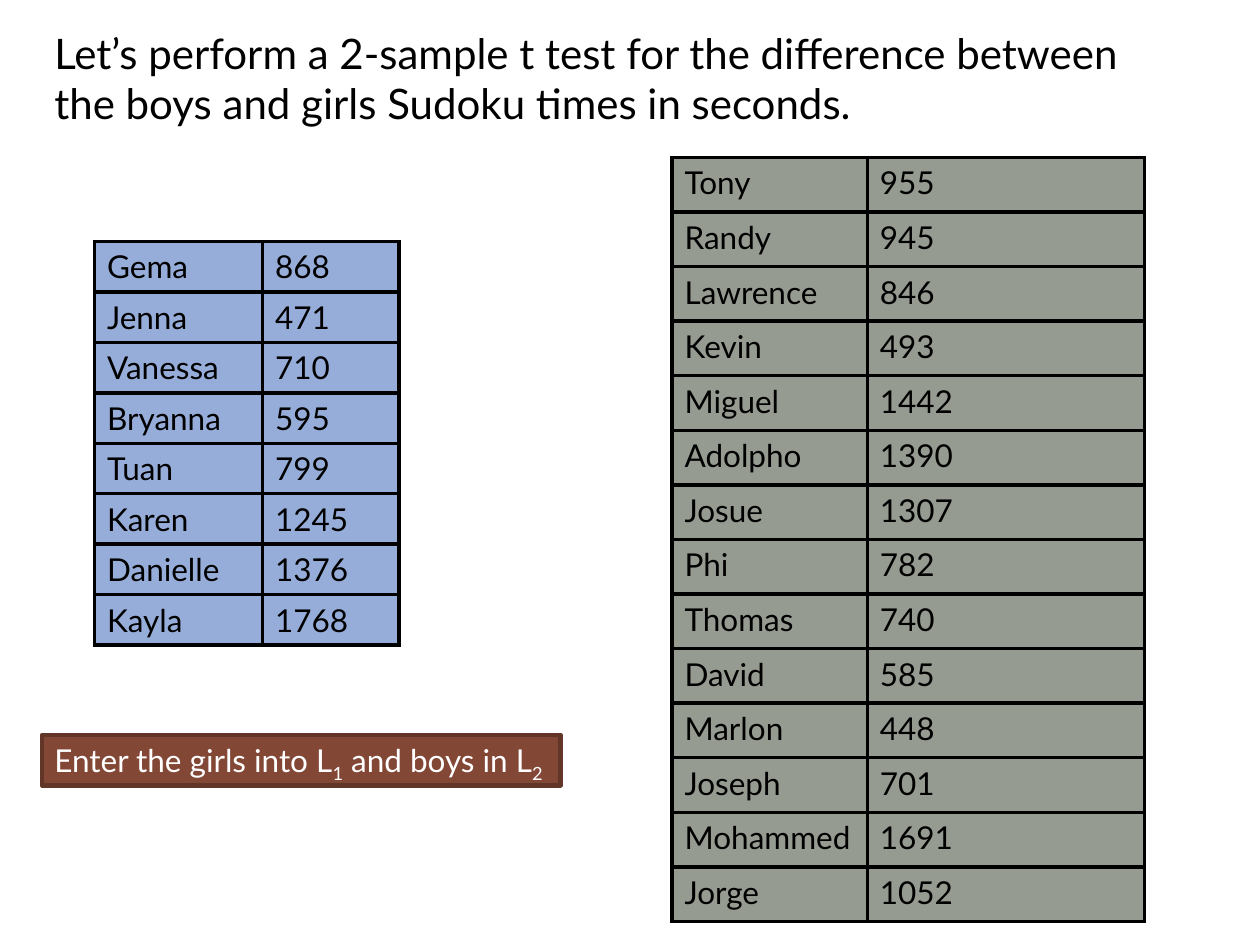
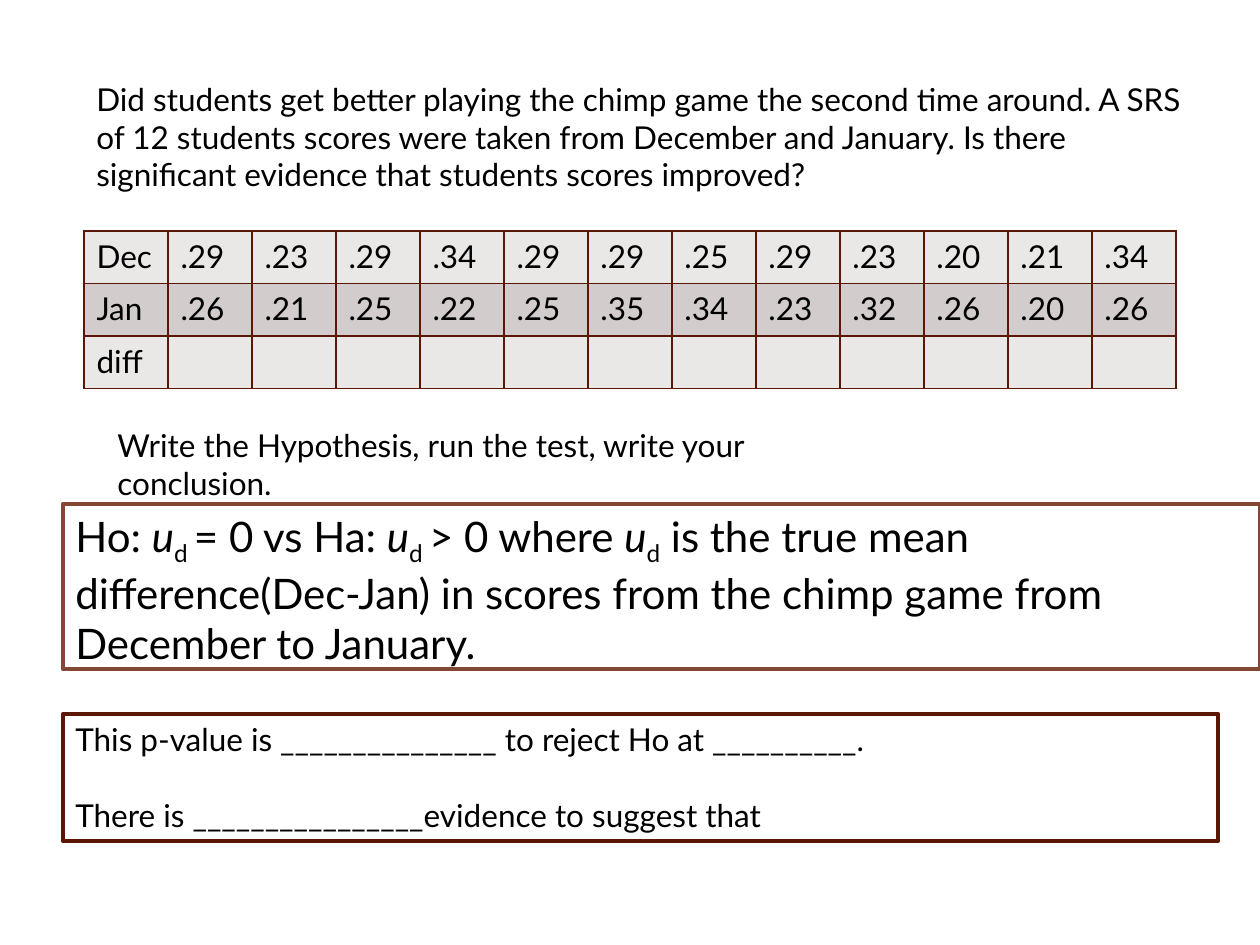
from dataclasses import dataclass

from lxml import etree
from pptx import Presentation
from pptx import util as u
from pptx.dml.color import RGBColor
from pptx.enum import shapes, text
from pptx.oxml import ns


@dataclass(frozen=True)
class Theme:
    font: str = "Lato"
    title: int = 24
    body: int = 18
    ink: str = "000000"
    paper: str = "FFFFFF"
    girls: str = "97ADD9"
    boys: str = "969B91"
    rust: str = "834736"
    rust_edge: str = "613528"
    maroon: str = "5A1705"
    light_row: str = "EAE8E7"
    dark_row: str = "D2CCCC"
    box_line: float = 2.5


theme = Theme()
FORMATS = {"plain": {}, "italic": {"italic": True}, "sub": {}}
FRAME = {"word_wrap": True, "auto_size": text.MSO_AUTO_SIZE.NONE,
         "vertical_anchor": text.MSO_ANCHOR.TOP}

prs = Presentation()
prs.slide_width, prs.slide_height = u.Inches(10), u.Inches(7.5)
COL, ROW = prs.slide_width / 120, prs.slide_height / 90


def add_text(s, at, paras, size=theme.body, color=theme.ink, fill=None, line=None, gap=0):
    x, y, w, h = at
    place = [int(v) for v in (x * COL, y * ROW, w * COL, h * ROW)]
    if fill:
        sp = s.shapes.add_shape(shapes.MSO_SHAPE.RECTANGLE, *place)
        sp.shadow.inherit = False
        sp.fill.solid()
        sp.fill.fore_color.rgb = RGBColor.from_string(fill)
        sp.line.color.rgb = RGBColor.from_string(line)
        sp.line.width = u.Pt(theme.box_line)
    else:
        sp = s.shapes.add_textbox(*place)
    tf = sp.text_frame
    for name, value in FRAME.items():
        setattr(tf, name, value)
    for i, runs in enumerate(paras):
        p = tf.paragraphs[0] if i == 0 else tf.add_paragraph()
        p.alignment = text.PP_ALIGN.LEFT
        p.space_before = u.Pt(gap if i else 0)
        for kind, words in runs:
            r = p.add_run()
            r.text = words
            font = {"name": theme.font, "size": u.Pt(size), **FORMATS[kind]}
            for name, value in font.items():
                setattr(r.font, name, value)
            r.font.color.rgb = RGBColor.from_string(color)
            if kind == "sub":
                r._r.get_or_add_rPr().set("baseline", "-25000")


def add_grid(s, x, y, widths, row_height, rows, fills, border, weight, align):
    frame = s.shapes.add_table(len(rows), len(widths), int(x * COL), int(y * ROW),
                               int(sum(widths) * COL), int(len(rows) * row_height * ROW))
    table = frame.table
    table.first_row = table.horz_banding = False
    for column, width in zip(table.columns, widths):
        column.width = int(width * COL)
    for i, values in enumerate(rows):
        table.rows[i].height = int(row_height * ROW)
        for j, value in enumerate(values):
            cell = table.cell(i, j)
            cell.fill.solid()
            cell.fill.fore_color.rgb = RGBColor.from_string(fills[i % len(fills)])
            p = cell.text_frame.paragraphs[0]
            p.alignment = align
            p.font.size = u.Pt(theme.body)
            if value:
                r = p.add_run()
                r.text = value
                r.font.name, r.font.size = theme.font, u.Pt(theme.body)
                r.font.color.rgb = RGBColor.from_string(theme.ink)
            tc_pr = cell._tc.get_or_add_tcPr()
            for k, side in enumerate(("lnL", "lnR", "lnT", "lnB")):
                ln = etree.Element(ns.qn(f"a:{side}"), w=str(u.Pt(weight)))
                solid = etree.SubElement(ln, ns.qn("a:solidFill"))
                etree.SubElement(solid, ns.qn("a:srgbClr"), val=border)
                tc_pr.insert(k, ln)


girls = [("Gema", "868"), ("Jenna", "471"), ("Vanessa", "710"), ("Bryanna", "595"),
         ("Tuan", "799"), ("Karen", "1245"), ("Danielle", "1376"), ("Kayla", "1768")]
boys = [("Tony", "955"), ("Randy", "945"), ("Lawrence", "846"), ("Kevin", "493"),
        ("Miguel", "1442"), ("Adolpho", "1390"), ("Josue", "1307"), ("Phi", "782"),
        ("Thomas", "740"), ("David", "585"), ("Marlon", "448"), ("Joseph", "701"),
        ("Mohammed", "1691"), ("Jorge", "1052")]
scores = [["Dec", *".29 .23 .29 .34 .29 .29 .25 .29 .23 .20 .21 .34".split()],
          ["Jan", *".26 .21 .25 .22 .25 .35 .34 .23 .32 .26 .20 .26".split()],
          ["diff"] + [""] * 12]

blank = prs.slide_layouts[6]

s = prs.slides.add_slide(blank)
add_text(s, (4, 2, 106.3, 10.9), [[("plain", "Let’s perform a 2-sample t test for the difference "
         "between the boys and girls Sudoku times in seconds.")]], theme.title)
for x, y, widths, height, times, fill in (
        (9, 23, (16, 13), 4.8, girls, theme.girls),
        (64, 15, (18.6, 26.4), 5.2, boys, theme.boys)):
    add_grid(s, x, y, widths, height, times, [fill], theme.ink, 2.25, text.PP_ALIGN.LEFT)
add_text(s, (4, 70, 49.4, 4.8),
         [[("plain", "Enter the girls into L"), ("sub", "1"),
           ("plain", " and boys in L"), ("sub", "2")]],
         color=theme.paper, fill=theme.rust, line=theme.rust_edge)

s = prs.slides.add_slide(blank)
add_text(s, (8, 7, 108, 12.1), [[("plain", "Did students get better playing the chimp game the "
         "second time around. A SRS of 12 students scores were taken from December and January. "
         "Is there significant evidence that students scores improved?")]])
add_grid(s, 8, 22, [8] * 13, 5, scores, [theme.light_row, theme.dark_row],
         theme.maroon, 1, text.PP_ALIGN.JUSTIFY)
add_text(s, (10, 40, 75.7, 4.8), [[("plain", "Write the Hypothesis, run the test, "
         "write your conclusion.")]])
add_text(s, (6, 48, 114, 15.7),
         [[("plain", "Ho: "), ("italic", "u"), ("sub", "d "),
           ("plain", "= 0 vs Ha: "), ("italic", "u"), ("sub", "d "),
           ("plain", "> 0 where "), ("italic", "u"), ("sub", "d"),
           ("plain", " is the true mean difference(Dec-Jan) in scores from the chimp game "
                     "from December to January.")]],
         theme.title, fill=theme.paper, line=theme.rust)
add_text(s, (6, 68, 110, 12.1),
         [[("plain", f"This p-value is {'_' * 15} to reject Ho at {'_' * 10}.")],
          [("plain", f"There is {'_' * 16}evidence to suggest that")]],
         fill=theme.paper, line=theme.maroon, gap=21.6)

prs.save("out.pptx")
